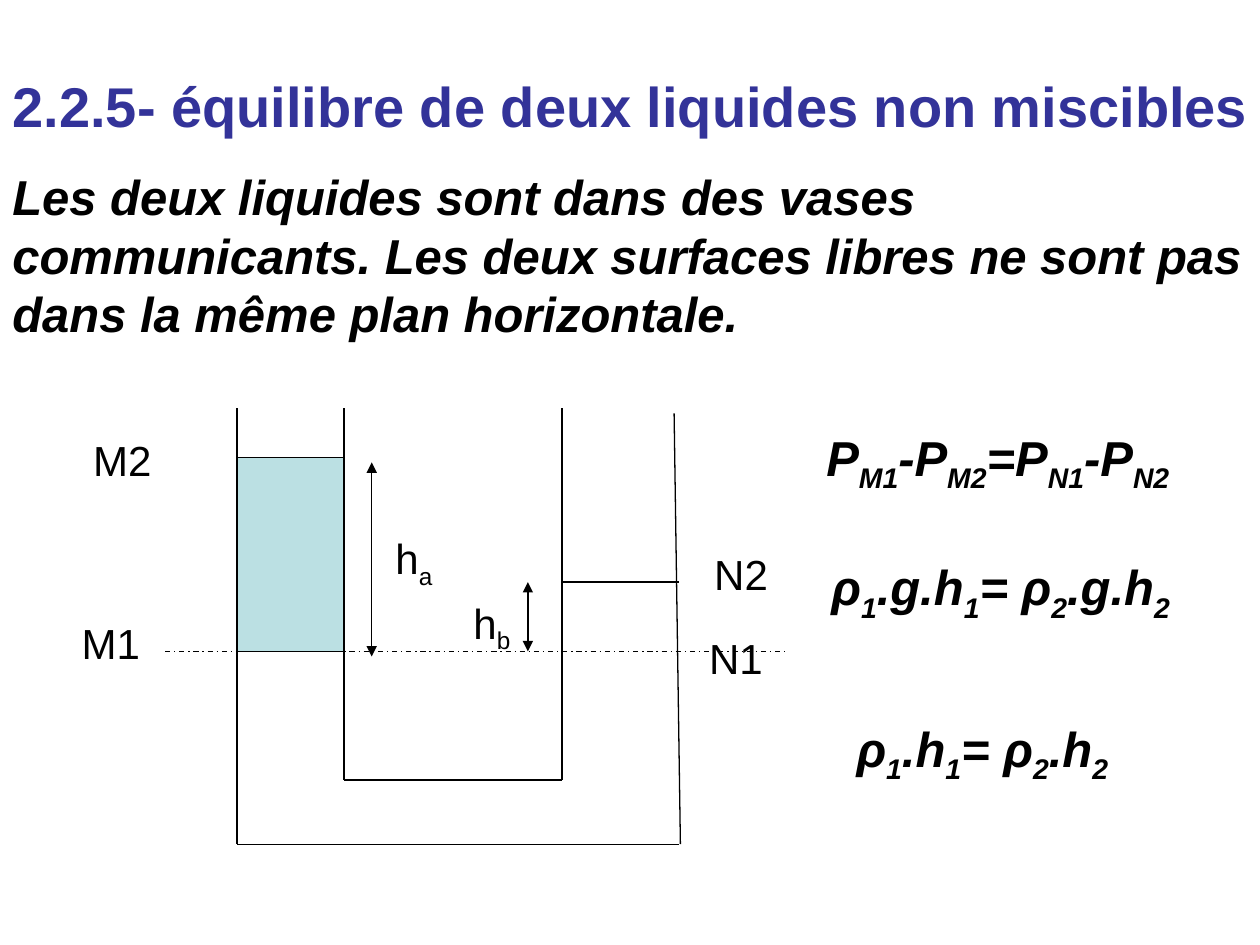
from dataclasses import dataclass

from lxml.etree import SubElement
from pptx import Presentation
from pptx.dml.color import RGBColor
from pptx.enum.dml import MSO_LINE_DASH_STYLE as DASH
from pptx.enum.shapes import MSO_CONNECTOR as CONN, MSO_SHAPE as SHAPE
from pptx.enum.text import MSO_ANCHOR as ANCHOR, MSO_AUTO_SIZE as AUTO, PP_ALIGN as ALIGN
from pptx.oxml.ns import qn
from pptx.util import Inches, Pt

COLORS = {"title": "333399", "ink": "000000", "liquid": "BBE0E3"}
FONT = "Arial"

# Key positions of the U-tube, in inches
LEFT_OUT, LEFT_IN, RIGHT_IN, RIGHT_OUT = 1.88, 2.73, 4.46, 5.39
RIM, SURFACE_A, SURFACE_B, INTERFACE = 3.24, 3.63, 4.62, 5.17
INNER_BASE, OUTER_BASE = 6.19, 6.7


@dataclass
class Text:
    """Text box; parts between underscores are subscripts."""
    text: str
    x: float
    y: float
    w: float
    h: float
    size: int = 24
    bold: bool = False
    italic: bool = False
    color: str = "ink"
    anchor: ANCHOR = ANCHOR.TOP


@dataclass
class Line:
    x1: float
    y1: float
    x2: float
    y2: float
    arrows: bool = False
    dashed: bool = False


def formula(text: str, x: float, y: float, w: float) -> Text:
    return Text(text, x, y, w, 0.91, 28, True, True, anchor=ANCHOR.MIDDLE)


TITLE = Text("2.2.5- équilibre de deux liquides non miscibles",
             0, 0.21, 10, 1.25, 32, True, color="title", anchor=ANCHOR.MIDDLE)

TEXTS = [
    Text("Les deux liquides sont dans des vases communicants. Les deux surfaces "
         "libres ne sont pas dans la même plan horizontale.",
         0, 1.39, 10, 1.26, 28, True, True, anchor=ANCHOR.MIDDLE),
    Text("M2", 0.64, 3.4, 0.67, 0.91),
    Text("M1", 0.55, 4.85, 0.67, 0.91),
    Text("N2", 5.57, 4.3, 0.67, 0.91),
    Text("N1", 5.53, 4.97, 0.67, 0.91),
    Text("h_a_", 3.04, 4.18, 0.58, 0.51),
    Text("h_b_", 3.66, 4.69, 0.67, 0.51),
    formula("P_M1_-P_M2_=P_N1_-P_N2_", 6.46, 3.2, 3.54),
    formula("ρ_1_.g.h_1_= ρ_2_.g.h_2_", 6.5, 4.23, 3.01),
    formula("ρ_1_.h_1_= ρ_2_.h_2_", 6.7, 5.51, 2.74),
]

LINES = [
    # Tube walls and bases
    Line(LEFT_OUT, RIM, LEFT_OUT, OUTER_BASE),
    Line(LEFT_IN, RIM, LEFT_IN, INNER_BASE),
    Line(RIGHT_IN, RIM, RIGHT_IN, INNER_BASE),
    Line(5.35, 3.28, 5.4, OUTER_BASE),
    Line(LEFT_IN, INNER_BASE, RIGHT_IN, INNER_BASE),
    Line(LEFT_OUT, OUTER_BASE, RIGHT_OUT, OUTER_BASE),
    # Liquid surfaces
    Line(1.93, SURFACE_A, LEFT_IN, SURFACE_A),
    Line(1.93, INTERFACE, LEFT_IN, INTERFACE),
    Line(RIGHT_IN, SURFACE_B, RIGHT_OUT, SURFACE_B),
    # Height arrows
    Line(2.95, 3.67, 2.95, 5.21, arrows=True),
    Line(4.19, SURFACE_B, 4.19, INTERFACE, arrows=True),
    # Reference level
    Line(1.31, INTERFACE, 6.24, INTERFACE, dashed=True),
]


def rgb(name: str) -> RGBColor:
    return RGBColor.from_string(COLORS[name])


def write_text(sp, t: Text) -> None:
    sp.left, sp.top, sp.width, sp.height = map(Inches, (t.x, t.y, t.w, t.h))
    tf = sp.text_frame
    tf.word_wrap = True
    tf.auto_size = AUTO.NONE
    tf.vertical_anchor = t.anchor
    tf.margin_left, tf.margin_right = Inches(0.1), Inches(0)
    p = tf.paragraphs[0]
    p.alignment = ALIGN.LEFT
    for i, part in enumerate(t.text.split("_")):
        if not part:
            continue
        r = p.add_run()
        r.text = part
        r.font.name, r.font.size = FONT, Pt(t.size)
        r.font.bold, r.font.italic = t.bold, t.italic
        r.font.color.rgb = rgb(t.color)
        if i % 2:
            r._r.get_or_add_rPr().set("baseline", "-25000")


def draw_line(s, line: Line) -> None:
    sp = s.shapes.add_connector(
        CONN.STRAIGHT, *map(Inches, (line.x1, line.y1, line.x2, line.y2)))
    sp.line.color.rgb, sp.line.width = rgb("ink"), Pt(0.75)
    if line.dashed:
        sp.line.dash_style = DASH.DASH_DOT
    if line.arrows:
        for end in ("a:headEnd", "a:tailEnd"):
            SubElement(sp.line._get_or_add_ln(), qn(end), type="triangle")
    SubElement(sp._element.spPr, qn("a:effectLst"))


def draw_liquid(s) -> None:
    sp = s.shapes.add_shape(SHAPE.RECTANGLE, *map(Inches, (
        LEFT_OUT, SURFACE_A, LEFT_IN - LEFT_OUT, INTERFACE - SURFACE_A)))
    sp.shadow.inherit = False
    sp.fill.solid()
    sp.fill.fore_color.rgb = rgb("liquid")
    sp.line.color.rgb, sp.line.width = rgb("ink"), Pt(0.75)


def main() -> None:
    prs = Presentation()
    prs.slide_width, prs.slide_height = Inches(10), Inches(7.5)
    s = prs.slides.add_slide(prs.slide_layouts[5])

    write_text(s.shapes.title, TITLE)
    draw_liquid(s)
    for line in LINES:
        draw_line(s, line)
    for t in TEXTS:
        write_text(s.shapes.add_textbox(0, 0, 0, 0), t)

    prs.save("out.pptx")


if __name__ == "__main__":
    main()
